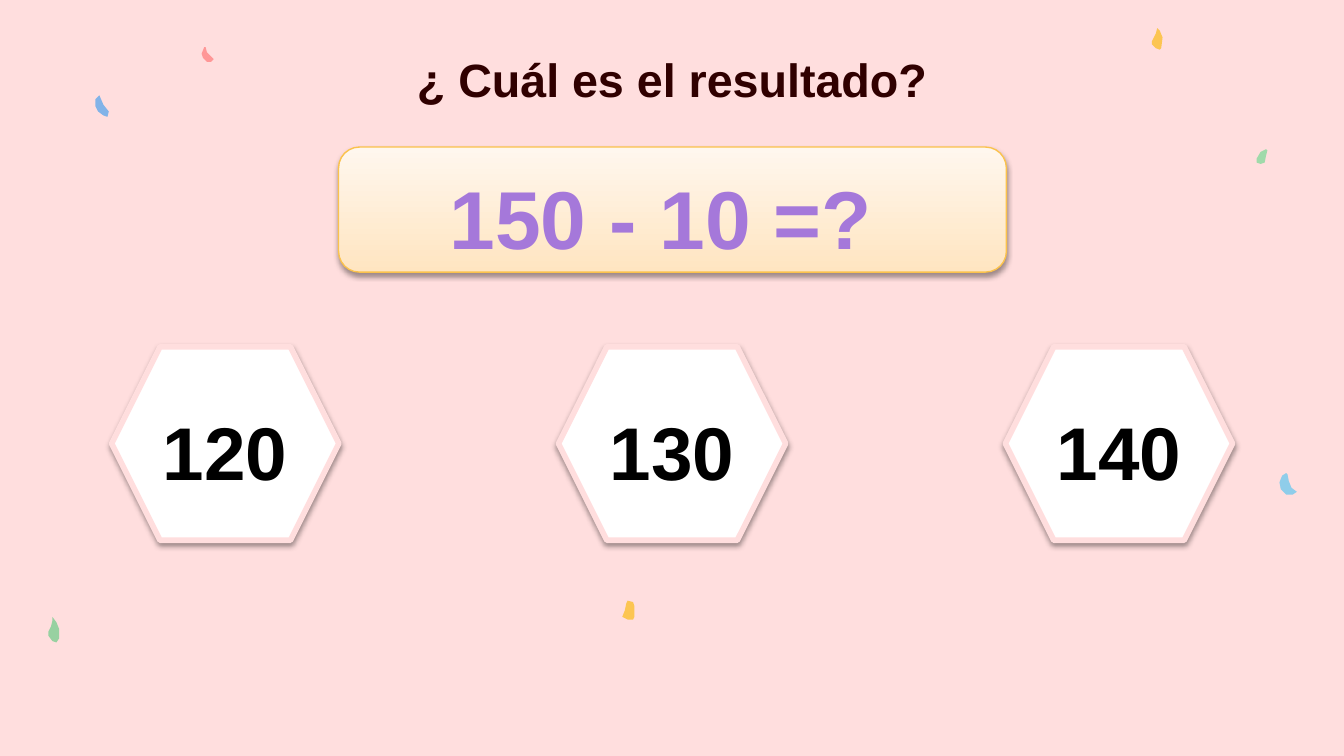
from lxml.etree import SubElement
from pptx import Presentation
from pptx.dml.color import RGBColor
from pptx.enum.shapes import MSO_SHAPE as Preset
from pptx.enum.text import MSO_ANCHOR as Anchor, MSO_AUTO_SIZE as AutoSize, PP_ALIGN as Align
from pptx.oxml.ns import qn
from pptx.util import Pt

FONT = "Arial"
COLORS = {
    "background": "FFDEDE",
    "title": "300000",
    "title_shadow": "5A3A9A",
    "question": "A578DA",
    "panel_bottom": "FFE5C1",
    "panel_top": "FFF7EE",
    "panel_line": "FBC24C",
    "answer_fill": "FFFFFF",
    "black": "000000",
    "yellow": "FCC552",
    "blue": "82B3E8",
    "mint": "A0DAAA",
    "sky": "8FCDEA",
    "coral": "FF9797",
    "green": "98D1A1",
}
ANSWERS = ["120", "130", "140"]

# Outlines in hundredths of an inch from the slide's top left corner.
CONFETTI = [
    ("yellow", [(467, 447), (471, 448), (472, 451), (472, 459), (471, 461),
                (467, 461), (463, 459), (465, 454), (466, 449)]),
    ("blue", [(74, 71), (77, 78), (81, 83), (80, 87), (77, 86),
              (73, 83), (71, 79), (71, 74)]),
    ("mint", [(935, 1210 // 10), (935, 118), (938, 113), (942, 111), (943, 112),
              (942, 116), (941, 121), (938, 122)]),
    ("sky", [(952, 359), (954, 354), (957, 352), (958, 353), (959, 358),
             (961, 363), (965, 366), (962, 368), (957, 368), (953, 364)]),
    ("coral", [(150, 40), (152, 35), (153, 35), (154, 39), (159, 44),
               (157, 46), (154, 46), (151, 43)]),
    ("green", [(39, 459), (42, 463), (44, 468), (44, 475), (42, 478),
               (39, 477), (36, 473), (36, 470), (38, 466), (39, 462)]),
    ("yellow", [(861, 21), (863, 23), (865, 28), (864, 36), (863, 37),
                (860, 36), (857, 33), (857, 31), (860, 25)]),
]


def color(name):
    return RGBColor.from_string(COLORS[name])


def add_shadow(effects, color_name, alpha):
    """Put a soft shadow straight below into an a:effectLst element."""
    shadow = SubElement(effects, qn("a:outerShdw"), blurRad=str(Pt(3.1)),
                        dist=str(Pt(1.6)), dir="5400000", algn="bl", rotWithShape="0")
    tone = SubElement(shadow, qn("a:srgbClr"), val=COLORS[color_name])
    SubElement(tone, qn("a:alpha"), val=str(alpha * 1000))


def write(shape, text, size, color_name, anchor, line_spacing):
    frame = shape.text_frame
    frame.word_wrap = True
    frame.auto_size = AutoSize.NONE
    frame.vertical_anchor = anchor
    para = frame.paragraphs[0]
    para.alignment = Align.CENTER
    para.line_spacing = line_spacing
    span = para.add_run()
    span.text = text
    span.font.name = FONT
    span.font.size = Pt(size)
    span.font.bold = True
    span.font.color.rgb = color(color_name)
    return span


def add_confetti(page, color_name, outline):
    builder = page.shapes.build_freeform(*outline[0], scale=Pt(0.72))
    builder.add_line_segments(outline[1:], close=True)
    piece = builder.convert_to_shape()
    piece.shadow.inherit = False
    piece.fill.solid()
    piece.fill.fore_color.rgb = color(color_name)
    piece.line.fill.background()


def add_title(page, text):
    title = page.shapes.title
    title.left, title.top, title.width, title.height = Pt(103.7), Pt(8), Pt(512.6), Pt(49)
    frame = title.text_frame
    frame.margin_left = frame.margin_top = frame.margin_right = frame.margin_bottom = 0
    span = write(title, text, 25, "title", Anchor.BOTTOM, 1)
    properties = span.font._element
    effects = SubElement(properties, qn("a:effectLst"))
    properties.find(qn("a:solidFill")).addnext(effects)
    add_shadow(effects, "title_shadow", 75)


def add_raised_shape(page, preset, left, top, width, height, line_color, line_width):
    shape = page.shapes.add_shape(preset, Pt(left), Pt(top), Pt(width), Pt(height))
    shape.line.color.rgb = color(line_color)
    shape.line.width = Pt(line_width)
    shape.shadow.inherit = False
    add_shadow(shape._element.spPr.find(qn("a:effectLst")), "black", 38)
    return shape


def add_question(page, text):
    panel = add_raised_shape(page, Preset.ROUNDED_RECTANGLE, 181.4, 78.8, 357.8, 67,
                             "panel_line", 0.75)
    panel.fill.gradient()
    panel.fill.gradient_angle = 90
    for stop, name in zip(panel.fill.gradient_stops, ("panel_bottom", "panel_top")):
        stop.color.rgb = color(name)
    write(panel, text, 44, "question", Anchor.MIDDLE, 1.15)


def add_answer(page, text, left):
    hexagon = add_raised_shape(page, Preset.HEXAGON, left, 185.8, 121.7, 103.7,
                               "background", 3)
    hexagon.fill.solid()
    hexagon.fill.fore_color.rgb = color("answer_fill")
    write(hexagon, text, 40, "black", Anchor.MIDDLE, 1.15)


def main():
    deck = Presentation()
    deck.slide_width, deck.slide_height = Pt(720), Pt(405)
    page = deck.slides.add_slide(deck.slide_layouts[5])
    page.background.fill.solid()
    page.background.fill.fore_color.rgb = color("background")
    for color_name, outline in CONFETTI:
        add_confetti(page, color_name, outline)
    add_title(page, "¿ Cuál es el resultado?")
    add_question(page, "150 - 10 =? ")
    for index, answer in enumerate(ANSWERS):
        add_answer(page, answer, 59.8 + index * 239.4)
    deck.save("out.pptx")


if __name__ == "__main__":
    main()
